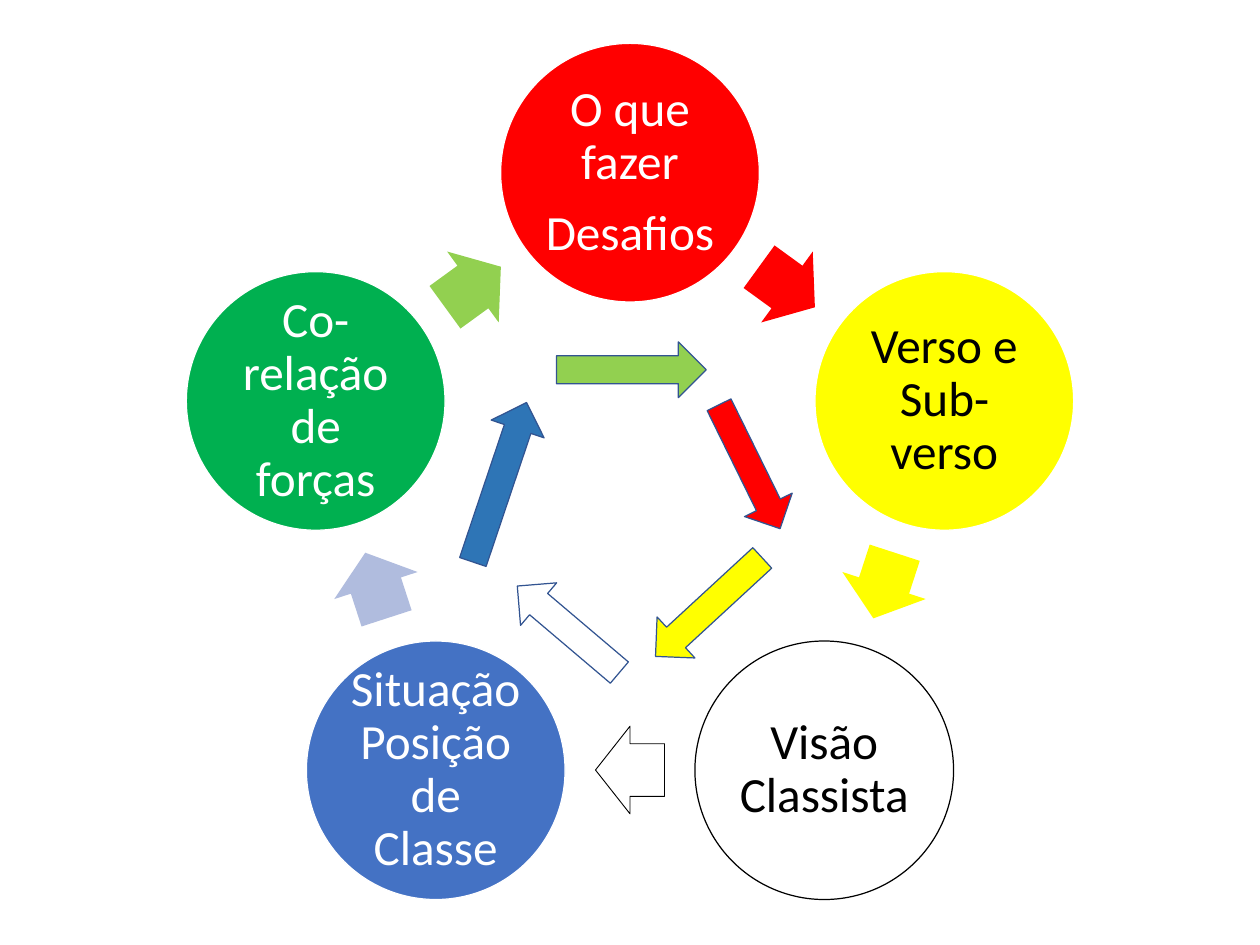
from math import cos, radians, sin

from pptx import Presentation
from pptx.dml.color import RGBColor
from pptx.enum.shapes import MSO_SHAPE
from pptx.enum.text import MSO_ANCHOR, PP_ALIGN
from pptx.util import Inches, Pt

HUES = {
    "red": "FF0000", "yellow": "FFFF00", "white": "FFFFFF", "black": "000000",
    "blue": "4472C4", "green": "00B050", "lime": "92D050", "mist": "B0BCDE",
    "steel": "2E75B6", "edge": "325491",
}
STAGES = [
    (["O que fazer", "Desafios"], "red", "white", "white", "red", None),
    (["Verso e Sub-verso"], "yellow", "white", "black", "yellow", None),
    (["Visão Classista"], "white", "black", "black", "white", "black"),
    (["Situação|Posição de Classe"], "blue", "white", "white", "mist", None),
    (["Co-relação de forças"], "green", "white", "white", "lime", None),
]
INNER = [
    (39.66, 51.03, 13.36, 4.43, 288.6, "steel"),
    (59.49, 49.39, 10.97, 4.22, 63.8, "red"),
    (45.11, 66.59, 10.62, 4.43, 220.3, None),
    (50.11, 39.13, 11.88, 4.43, 0, "lime"),
    (56.26, 64.25, 11.53, 4.43, 137.3, "yellow"),
]


def hue(name):
    """Return the colour of the given name."""
    return RGBColor.from_string(HUES[name])


def draw(slide, kind, mid, size, fill=None, line=None, weight=1, turn=0):
    """Draw a preset shape centred on a point."""
    (x, y), (w, h) = mid, size
    shape = slide.shapes.add_shape(
        kind, int(x - w / 2), int(y - h / 2), int(w), int(h))
    shape.shadow.inherit = False
    shape.rotation = turn
    if fill:
        shape.fill.solid()
        shape.fill.fore_color.rgb = hue(fill)
    else:
        shape.fill.background()
    if line:
        shape.line.color.rgb = hue(line)
        shape.line.width = Pt(weight)
    else:
        shape.line.fill.background()
    return shape


def write(shape, paras, size=40, color="black", font="Calibri", inset=0.06):
    """Write centred paragraphs in a shape, breaking lines at each bar."""
    frame = shape.text_frame
    frame.word_wrap = True
    frame.vertical_anchor = MSO_ANCHOR.MIDDLE
    frame.margin_left = frame.margin_right = Inches(inset)
    frame.margin_top = frame.margin_bottom = Inches(inset)
    for i, text in enumerate(paras):
        para = frame.add_paragraph() if i else frame.paragraphs[0]
        para.alignment = PP_ALIGN.CENTER
        para.line_spacing = 0.9
        para.space_after = Pt(size * 0.35)
        for j, part in enumerate(text.split("|")):
            if j:
                para.add_line_break()
            run = para.add_run()
            run.text = part
            run.font.size = Pt(size)
            run.font.name = font
            run.font.color.rgb = hue(color)


def ring(slide, left, top, width, height):
    """Place the five stages and the arrows between them on a circle."""
    unit = width / 100
    step = 360 / len(STAGES)

    def spot(angle, reach):
        """Return the point at an angle and reach from the hub."""
        turn = radians(angle)
        return (left + width / 2 + reach * unit * cos(turn),
                top + height * 0.5323 + reach * unit * sin(turn))

    for i, (paras, fill, line, ink, tint, rim) in enumerate(STAGES):
        angle = i * step - 90
        disc = draw(slide, MSO_SHAPE.OVAL, spot(angle, 26.23),
                    (20.53 * unit, 20.53 * unit), fill, line)
        write(disc, paras, color=ink)
        arrow = draw(slide, MSO_SHAPE.RIGHT_ARROW, spot(angle + step / 2, 21.2),
                     (5.48 * unit, 6.96 * unit), tint, rim, 0.75,
                     (i + 0.5) * step)
        arrow.adjustments[0] = 0.6


def core(slide, left, top, width, height):
    """Place the long arrows inside the ring."""
    for x, y, w, h, turn, fill in INNER:
        mid = left + width * x / 100, top + height * y / 100
        draw(slide, MSO_SHAPE.RIGHT_ARROW, mid,
             (width * w / 100, width * h / 100), fill, "edge", turn=turn)


def main():
    """Build the slide and save it."""
    deck = Presentation()
    deck.slide_width, deck.slide_height = Inches(14.22), Inches(10.67)
    slide = deck.slides.add_slide(deck.slide_layouts[6])
    box = 0, 0, deck.slide_width, deck.slide_height
    ring(slide, *box)
    core(slide, *box)
    deck.save("out.pptx")


if __name__ == "__main__":
    main()
